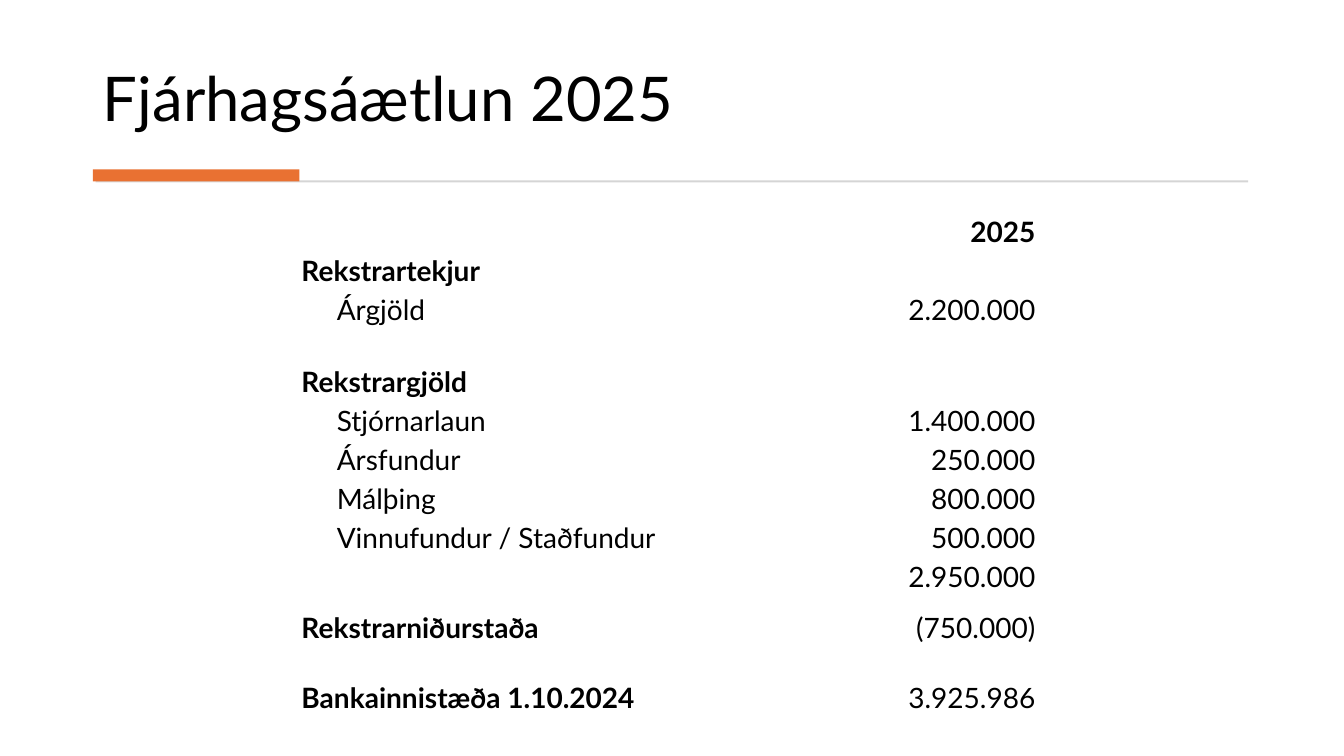
from dataclasses import dataclass

from pptx import Presentation
from pptx.dml.color import RGBColor
from pptx.enum.shapes import MSO_SHAPE
from pptx.enum.text import MSO_ANCHOR, PP_ALIGN
from pptx.slide import Slide
from pptx.table import _Cell
from pptx.text.text import TextFrame
from pptx.util import Inches, Pt

BLACK = RGBColor(0x00, 0x00, 0x00)
GREY = RGBColor(0xD5, 0xD5, 0xD5)
ORANGE = RGBColor(0xE9, 0x71, 0x32)
FONT_NAME = "Lato"

# Nine ordinary rows share one height evenly
ROW_HEIGHT = 3.47 / 9
SPACER_HEIGHT = 0.33
COLUMN_WIDTHS = (5.96, 1.32)
ITEM_INDENT = 0.35


@dataclass(frozen=True)
class Bar:
    left: float
    top: float
    width: float
    height: float
    color: RGBColor


@dataclass(frozen=True)
class BudgetRow:
    label: str = ""
    amount: str = ""
    is_item: bool = False
    bold_amount: bool = False
    height: float = ROW_HEIGHT


BARS = (
    Bar(0.95, 1.79, 11.43, 0.02, GREY),
    Bar(0.92, 1.68, 2.05, 0.12, ORANGE),
)

BUDGET = (
    BudgetRow(amount="2025", bold_amount=True),
    BudgetRow("Rekstrartekjur"),
    BudgetRow("Árgjöld", "2.200.000", is_item=True),
    BudgetRow(height=SPACER_HEIGHT),
    BudgetRow("Rekstrargjöld"),
    BudgetRow("Stjórnarlaun", "1.400.000", is_item=True),
    BudgetRow("Ársfundur", "250.000", is_item=True),
    BudgetRow("Málþing", "800.000", is_item=True),
    BudgetRow("Vinnufundur / Staðfundur", "500.000", is_item=True),
    BudgetRow(amount="2.950.000"),
    BudgetRow("Rekstrarniðurstaða", "(750.000)", height=0.63),
    BudgetRow("Bankainnistæða 1.10.2024", "3.925.986", height=0.76),
)


def write_text(frame: TextFrame, text: str, size: int, bold: bool, alignment: PP_ALIGN) -> None:
    paragraph = frame.paragraphs[0]
    paragraph.alignment = alignment
    run = paragraph.add_run()
    run.text = text
    run.font.color.rgb = BLACK
    font_format = {"name": FONT_NAME, "size": Pt(size), "bold": bold}
    for attribute, value in font_format.items():
        setattr(run.font, attribute, value)


def add_title(slide: Slide, text: str) -> None:
    title = slide.shapes.title
    position = {"left": 0.92, "top": 0.28, "width": 11.49, "height": 1.11}
    for attribute, value in position.items():
        setattr(title, attribute, Inches(value))
    title.text_frame.vertical_anchor = MSO_ANCHOR.BOTTOM
    write_text(title.text_frame, text, 44, False, PP_ALIGN.LEFT)
    title.text_frame.paragraphs[0].line_spacing = 0.9


def add_bar(slide: Slide, bar: Bar) -> None:
    box = (Inches(value) for value in (bar.left, bar.top, bar.width, bar.height))
    shape = slide.shapes.add_shape(MSO_SHAPE.RECTANGLE, *box)
    shape.shadow.inherit = False
    shape.fill.solid()
    shape.fill.fore_color.rgb = bar.color
    shape.line.fill.background()


def fill_cell(cell: _Cell, text: str, bold: bool, alignment: PP_ALIGN, indent: float = 0) -> None:
    cell.fill.background()
    cell_format = {
        "margin_left": Inches(indent),
        "margin_right": 0,
        "margin_top": 0,
        "margin_bottom": 0,
        "vertical_anchor": MSO_ANCHOR.MIDDLE,
    }
    for attribute, value in cell_format.items():
        setattr(cell, attribute, value)
    if text:
        write_text(cell.text_frame, text, 20, bold, alignment)


def add_budget_table(slide: Slide) -> None:
    table = slide.shapes.add_table(
        len(BUDGET), len(COLUMN_WIDTHS), Inches(2.99), Inches(2.11),
        Inches(sum(COLUMN_WIDTHS)), Inches(sum(row.height for row in BUDGET)),
    ).table
    table.first_row = False
    table.horz_banding = False
    for column, width in zip(table.columns, COLUMN_WIDTHS):
        column.width = Inches(width)
    for table_row, entry in zip(table.rows, BUDGET):
        table_row.height = Inches(entry.height)
        label_cell, amount_cell = table_row.cells
        indent = ITEM_INDENT if entry.is_item else 0
        fill_cell(label_cell, entry.label, not entry.is_item, PP_ALIGN.LEFT, indent)
        fill_cell(amount_cell, entry.amount, entry.bold_amount, PP_ALIGN.RIGHT)


def main() -> None:
    presentation = Presentation()
    presentation.slide_width = Inches(13.33)
    presentation.slide_height = Inches(7.5)
    slide = presentation.slides.add_slide(presentation.slide_layouts.get_by_name("Title Only"))

    # Heading with its divider
    add_title(slide, "Fjárhagsáætlun 2025")
    for bar in BARS:
        add_bar(slide, bar)

    # Budget figures
    add_budget_table(slide)

    presentation.save("out.pptx")


if __name__ == "__main__":
    main()
